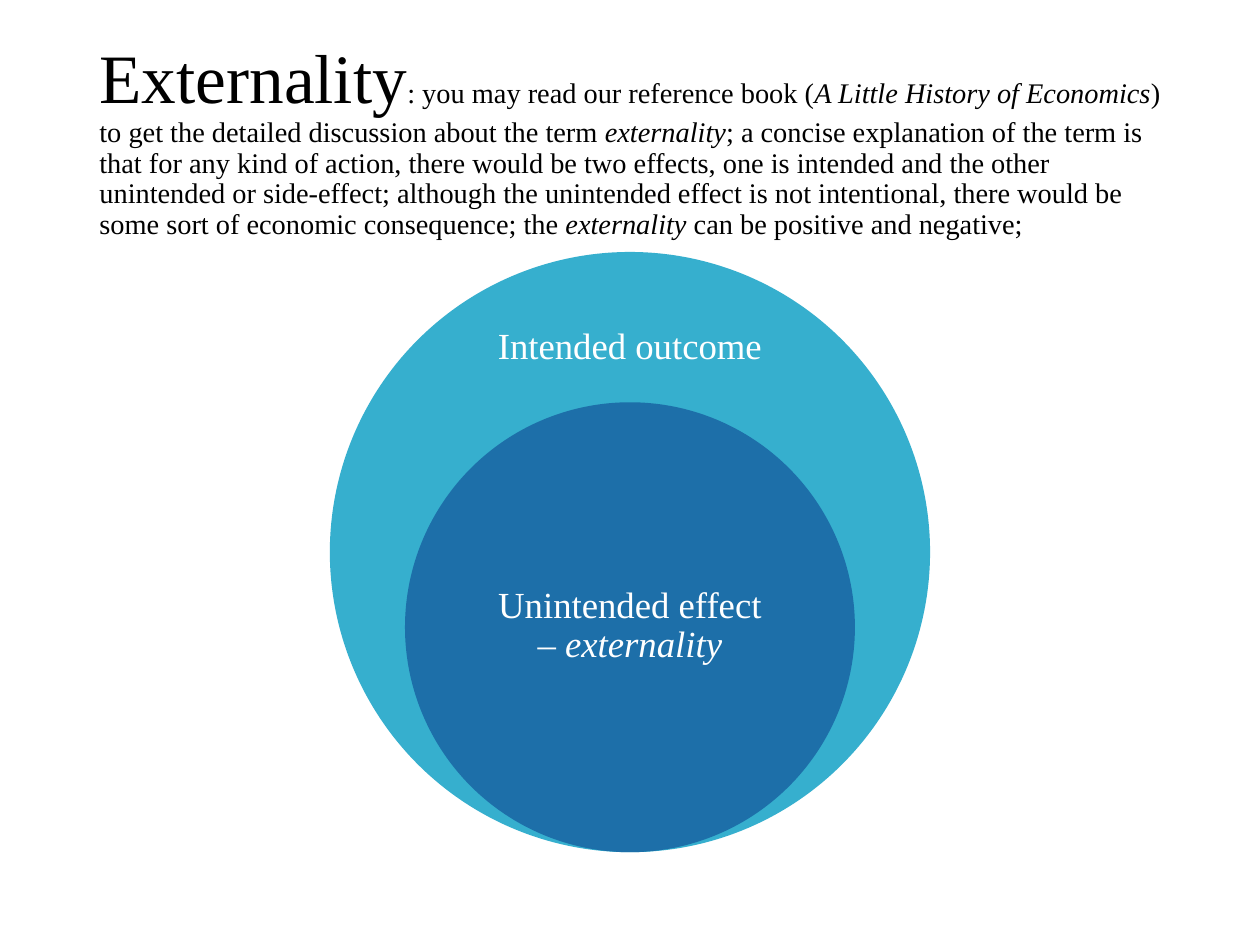
from pptx import Presentation
from pptx.dml.color import RGBColor
from pptx.enum.shapes import MSO_SHAPE
from pptx.enum.text import MSO_ANCHOR, MSO_AUTO_SIZE, PP_ALIGN
from pptx.util import Cm, Pt

COLORS = {"text": "000000", "label": "FFFFFF", "outer": "36AFCE", "inner": "1D6FA9"}
FONT = "Times New Roman"
WIDTH, HEIGHT = 25.4, 19.05
CIRCLE_BOTTOM = 17.18

# text, size, italic
TITLE = [
    ("Externality", 39.6, False),
    (": you may read our reference book (", 16.2, False),
    ("A Little History of Economics", 16.2, True),
    (") to get the detailed discussion about the term ", 16.2, False),
    ("externality", 16.2, True),
    ("; a concise explanation of the term is that for any kind of action, there would be "
     "two effects, one is intended and the other unintended or side-effect; although the "
     "unintended effect is not intentional, there would be some sort of economic "
     "consequence; the ", 16.2, False),
    ("externality", 16.2, True),
    (" can be positive and negative;", 16.2, False),
]
CIRCLES = [
    {"color": "outer", "diameter": 12.1, "label": (5.97, 6.35, 2.06),
     "runs": [("Intended outcome", 21, False)]},
    {"color": "inner", "diameter": 9.07, "label": (10.36, 6.4, 4.52),
     "runs": [("Unintended effect – ", 21, False), ("externality", 21, True)]},
]


def write(tf, runs, color, align):
    """Fill a text frame with one paragraph of formatted runs."""
    tf.word_wrap = True
    tf.auto_size = MSO_AUTO_SIZE.NONE
    tf.vertical_anchor = MSO_ANCHOR.MIDDLE
    p = tf.paragraphs[0]
    p.alignment = align
    p.line_spacing = 0.9
    p.space_before = Pt(0)
    for text, size, italic in runs:
        r = p.add_run()
        r.text = text
        r.font.name = FONT
        r.font.size = Pt(size)
        r.font.italic = italic
        r.font.color.rgb = RGBColor.from_string(COLORS[color])


def add_circle(shapes, color, diameter, label, runs):
    """Add a centred circle resting on the common bottom, with its label."""
    oval = shapes.add_shape(MSO_SHAPE.OVAL, Cm((WIDTH - diameter) / 2),
                            Cm(CIRCLE_BOTTOM - diameter), Cm(diameter), Cm(diameter))
    oval.shadow.inherit = False
    oval.fill.solid()
    oval.fill.fore_color.rgb = RGBColor.from_string(COLORS[color])
    oval.line.fill.background()
    top, width, height = label
    box = shapes.add_textbox(Cm((WIDTH - width) / 2), Cm(top), Cm(width), Cm(height))
    tf = box.text_frame
    tf.margin_left = tf.margin_right = tf.margin_top = tf.margin_bottom = Cm(0.41)
    write(tf, runs, "label", PP_ALIGN.CENTER)


def main():
    """Build the slide and save it."""
    prs = Presentation()
    prs.slide_width, prs.slide_height = Cm(WIDTH), Cm(HEIGHT)
    s = prs.slides.add_slide(prs.slide_layouts[5])
    title = s.shapes.title
    title.left, title.top, title.width, title.height = Cm(1.75), Cm(1.02), Cm(21.9), Cm(3.68)
    write(title.text_frame, TITLE, "text", PP_ALIGN.LEFT)
    group = s.shapes.add_group_shape()
    for circle in CIRCLES:
        add_circle(group.shapes, **circle)
    prs.save("out.pptx")


if __name__ == "__main__":
    main()
